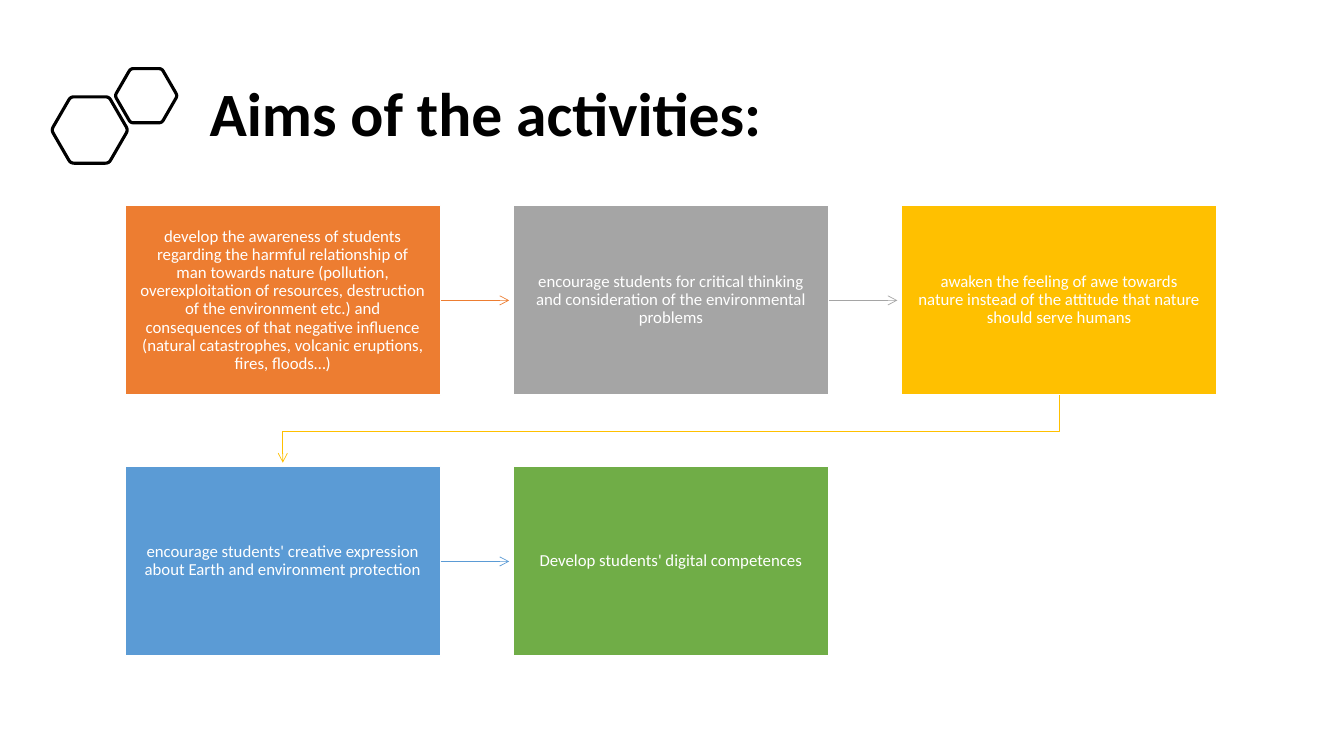
"""Build the slide that shows the aims of the activities as a snaking flow of boxes."""
from math import cos, pi, sin

from pptx import Presentation
from pptx.dml.color import RGBColor
from pptx.enum.shapes import MSO_CONNECTOR as CONNECTOR, MSO_SHAPE as SHAPE
from pptx.enum.text import MSO_ANCHOR as ANCHOR, PP_ALIGN as ALIGN
from pptx.oxml.ns import qn
from pptx.util import Inches, Pt
from lxml.etree import SubElement

TITLE = "Aims of the activities:"
AIMS = [
    ("develop the awareness of students regarding the harmful relationship of man towards nature "
     "(pollution, overexploitation of resources, destruction of the environment etc.) and consequences "
     "of that negative influence (natural catastrophes, volcanic eruptions, fires, floods…)", "ED7D31"),
    ("encourage students for critical thinking and consideration of the environmental problems", "A5A5A5"),
    ("awaken the feeling of awe towards nature instead of the attitude that nature should serve humans",
     "FFC000"),
    ("encourage students' creative expression about Earth and environment protection", "5B9BD5"),
    ("Develop students' digital competences", "70AD47"),
]
HEXAGONS = [(0.89, 1.29, 0.38), (1.45, 0.95, 0.31)]
COLUMNS = 3
LEFT, TOP = 1.24, 2.04
BOX_WIDTH, BOX_HEIGHT = 3.13, 1.88
STEP_X, STEP_Y = 3.85, 2.59
ARROW_GAP = 0.04
CORNER = 0.09


def color(value):
    return RGBColor.from_string(value)


def write(shape, text, size, fill, bold=False, align=ALIGN.LEFT, inset=(0.1, 0.05)):
    frame = shape.text_frame
    frame.word_wrap = True
    frame.vertical_anchor = ANCHOR.MIDDLE
    frame.margin_left = frame.margin_right = Inches(inset[0])
    frame.margin_top = frame.margin_bottom = Inches(inset[1])
    para = frame.paragraphs[0]
    para.alignment = align
    para.line_spacing = 0.9
    span = para.add_run()
    span.text = text
    span.font.name = "Calibri"
    span.font.size = Pt(size)
    span.font.bold = bold
    span.font.color.rgb = color(fill)


def style_line(shape, stroke, width, arrow=False):
    shape.line.color.rgb = color(stroke)
    shape.line.width = Pt(width)
    if arrow:
        SubElement(shape.line._get_or_add_ln(), qn("a:tailEnd"), type="arrow")


def add_outline(page, points, stroke, width, close=False, arrow=False):
    points = [(Inches(x), Inches(y)) for x, y in points]
    builder = page.shapes.build_freeform(*points[0])
    builder.add_line_segments(points[1:], close=close)
    outline = builder.convert_to_shape()
    outline.fill.background()
    outline.shadow.inherit = False
    style_line(outline, stroke, width, arrow)


def rounded_hexagon(center_x, center_y, radius):
    corners = [(center_x + radius * cos(k * pi / 3), center_y + radius * sin(k * pi / 3)) for k in range(6)]
    points = []
    for k, corner in enumerate(corners):
        before, after = corners[k - 1], corners[(k + 1) % 6]
        start, end = ([c + CORNER * (n - c) for c, n in zip(corner, near)] for near in (before, after))
        for t in (0, 0.25, 0.5, 0.75, 1):
            points.append(tuple((1 - t) ** 2 * s + 2 * t * (1 - t) * c + t * t * e
                                for s, c, e in zip(start, corner, end)))
    return points


def add_box(page, x, y, text, fill):
    box = page.shapes.add_shape(SHAPE.RECTANGLE, Inches(x), Inches(y), Inches(BOX_WIDTH), Inches(BOX_HEIGHT))
    box.shadow.inherit = False
    box.fill.solid()
    box.fill.fore_color.rgb = color(fill)
    style_line(box, "FFFFFF", 1)
    write(box, text, 12, "FFFFFF", align=ALIGN.CENTER, inset=(0.15, 0.16))
    return box


def add_arrow(page, box, x, y, stroke):
    start, end = x + BOX_WIDTH, x + STEP_X - ARROW_GAP
    middle = y + BOX_HEIGHT / 2
    arrow = page.shapes.add_connector(CONNECTOR.STRAIGHT, Inches(start), Inches(middle),
                                      Inches(end), Inches(middle))
    arrow.begin_connect(box, 3)
    style_line(arrow, stroke, 0.5, arrow=True)
    SubElement(arrow._element.spPr, qn("a:effectLst"))


def add_return_arrow(page, x, y, stroke):
    start_x, end_x = x + BOX_WIDTH / 2, LEFT + BOX_WIDTH / 2
    bottom, next_top = y + BOX_HEIGHT, y + STEP_Y
    turn = (bottom + next_top) / 2
    route = [(start_x, bottom), (start_x, turn), (end_x, turn), (end_x, next_top - ARROW_GAP)]
    add_outline(page, route, stroke, 0.5, arrow=True)


def main():
    deck = Presentation()
    deck.slide_width, deck.slide_height = Inches(13.33), Inches(7.5)
    page = deck.slides.add_slide(deck.slide_layouts[6])
    title = page.shapes.add_textbox(Inches(1.98), Inches(0.57), Inches(10.81), Inches(1.17))
    write(title, TITLE, 44, "000000", bold=True)
    for hexagon in HEXAGONS:
        add_outline(page, rounded_hexagon(*hexagon), "000000", 2.25, close=True)
    for index, (text, fill) in enumerate(AIMS):
        row, column = divmod(index, COLUMNS)
        x, y = LEFT + column * STEP_X, TOP + row * STEP_Y
        box = add_box(page, x, y, text, fill)
        if index == len(AIMS) - 1:
            continue
        if column < COLUMNS - 1:
            add_arrow(page, box, x, y, fill)
        else:
            add_return_arrow(page, x, y, fill)
    deck.save("out.pptx")


if __name__ == "__main__":
    main()
